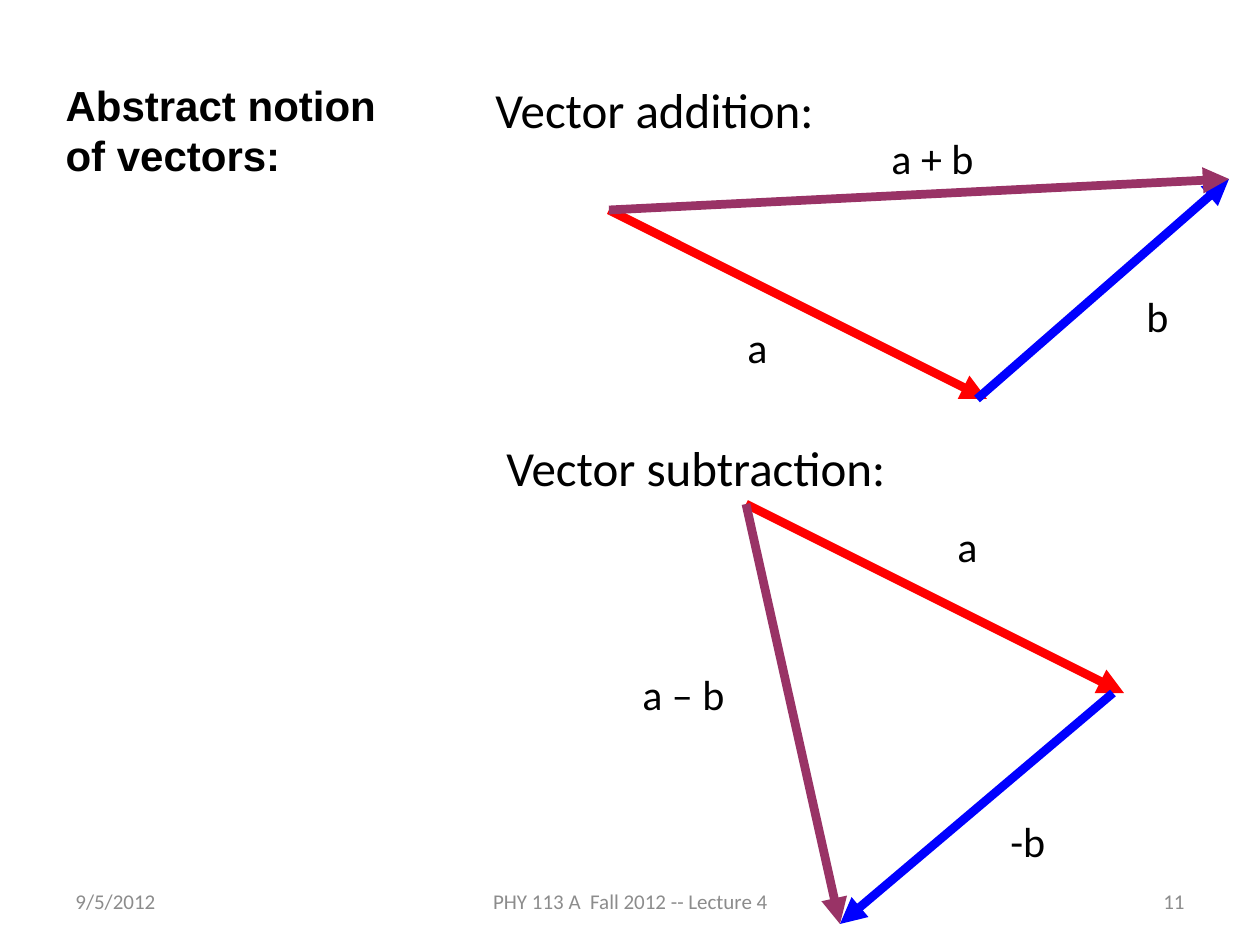
from pptx import Presentation
from pptx.dml.color import RGBColor
from pptx.enum.shapes import MSO_CONNECTOR
from pptx.enum.text import MSO_ANCHOR, MSO_AUTO_SIZE, PP_ALIGN
from pptx.oxml.ns import qn
from pptx.util import Emu, Pt
from lxml import etree

LEFT, MID, RIGHT = PP_ALIGN.LEFT, PP_ALIGN.CENTER, PP_ALIGN.RIGHT
TOP, CENTRE = MSO_ANCHOR.TOP, MSO_ANCHOR.MIDDLE
FIT, FIXED = MSO_AUTO_SIZE.SHAPE_TO_FIT_TEXT, MSO_AUTO_SIZE.NONE
STRAIGHT = MSO_CONNECTOR.STRAIGHT
SCALE = 914400 / 126
RED, BLUE, PLUM, GREY = "FF0000", "0000FF", "993366", "8C8C8C"

deck = Presentation()
deck.slide_width = Emu(round(1260 * SCALE))
deck.slide_height = Emu(round(945 * SCALE))
slide = deck.slides.add_slide(deck.slide_layouts[5])


def write(text, box, size=24, font="Calibri", color="000000", bold=False,
          align=LEFT, anchor=TOP, wrap=True, fit=FIT, shape=None):
    spot = [Emu(round(n * SCALE)) for n in box]
    if shape is None:
        shape = slide.shapes.add_textbox(*spot)
    shape.left, shape.top, shape.width, shape.height = spot
    frame = shape.text_frame
    frame.text = text
    frame.word_wrap = wrap
    frame.auto_size = fit
    frame.vertical_anchor = anchor
    para = frame.paragraphs[0]
    para.alignment = align
    face = para.runs[0].font
    face.name, face.size, face.bold = font, Pt(size), bold
    face.color.rgb = RGBColor.from_string(color)


def arrow(start, end, color):
    line = slide.shapes.add_connector(
        STRAIGHT, *[Emu(round(n * SCALE)) for n in start + end])
    line.line.width = Pt(5)
    line.line.color.rgb = RGBColor.from_string(color)
    tip = etree.SubElement(line.line._get_or_add_ln(), qn("a:tailEnd"))
    tip.set("type", "triangle")
    etree.SubElement(line._element.spPr, qn("a:effectLst"))


write("Abstract notion of vectors:", (53, 73, 357, 115), font="Arial",
      bold=True, fit=FIXED, shape=slide.shapes.title)

for text, left, width, align in [
    ("9/5/2012", 63, 294, LEFT),
    ("PHY 113 A  Fall 2012 -- Lecture 4", 431, 399, MID),
    ("11", 903, 294, RIGHT),
]:
    write(text, (left, 876, width, 50), size=12, color=GREY, align=align,
          anchor=CENTRE, fit=FIXED)

write("Vector addition:", (483, 73, 504, 72), size=28)
write("Vector subtraction:", (494, 431, 504, 72), size=28)

for start, end, color in [
    ((609, 210), (987, 399), RED),
    ((977, 399), (1229, 179), BLUE),
    ((609, 210), (1229, 179), PLUM),
    ((746, 504), (1124, 693), RED),
    ((1113, 693), (840, 924), BLUE),
    ((746, 504), (840, 924), PLUM),
]:
    arrow(start, end, color)

for text, left, top, width, wrap in [
    ("a + b", 879, 126, 117, True),
    ("a", 735, 315, 45, False),
    ("b", 1134, 284, 48, False),
    ("a – b", 630, 662, 120, True),
    ("a", 945, 514, 45, False),
    ("-b", 998, 809, 60, False),
]:
    write(text, (left, top, width, 63), wrap=wrap)

deck.save("out.pptx")
